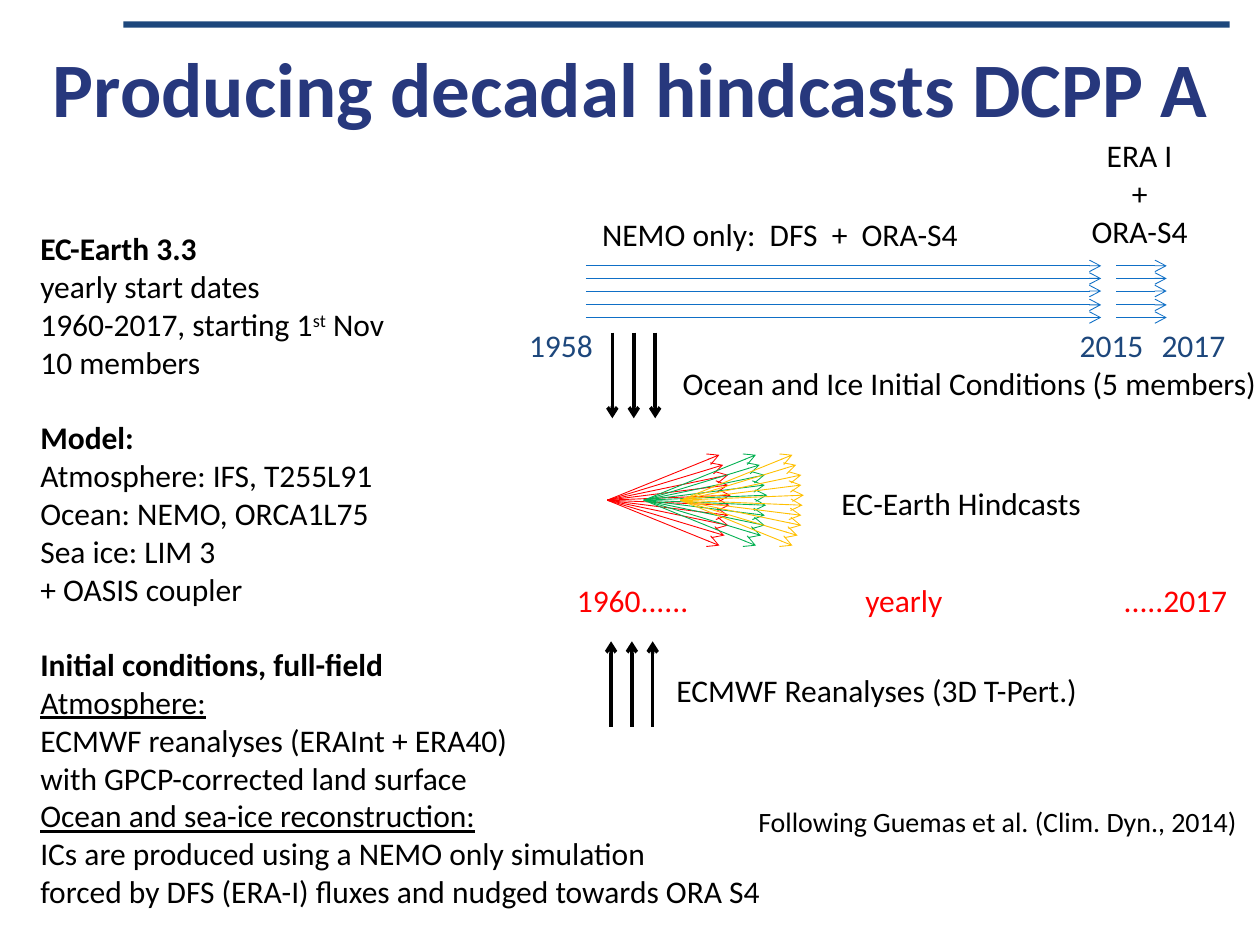
from dataclasses import dataclass

from lxml import etree
from pptx import Presentation
from pptx.dml.color import RGBColor
from pptx.enum.shapes import MSO_CONNECTOR, MSO_SHAPE
from pptx.enum.text import MSO_ANCHOR, MSO_AUTO_SIZE, PP_ALIGN
from pptx.oxml.ns import qn
from pptx.util import Inches, Pt

STRAIGHT = MSO_CONNECTOR.STRAIGHT
RECTANGLE = MSO_SHAPE.RECTANGLE
MIDDLE = MSO_ANCHOR.MIDDLE
FIT_SHAPE = MSO_AUTO_SIZE.SHAPE_TO_FIT_TEXT
NO_FIT = MSO_AUTO_SIZE.NONE
LEFT = PP_ALIGN.LEFT
CENTER = PP_ALIGN.CENTER


@dataclass(frozen=True)
class Theme:
    font: str = "Calibri"
    text: str = "000000"
    title: str = "27387D"
    navy: str = "1D477C"
    blue: str = "0F6FC6"
    red: str = "FF0000"
    green: str = "00B050"
    yellow: str = "FFC000"
    title_size: float = 44
    text_size: float = 18
    citation_size: float = 16
    section_gap: float = 21.6
    thin: float = 0.5
    thick: float = 2


THEME = Theme()


def write(paragraph, text, size=THEME.text_size, color=THEME.text, bold=False,
          underline=False, superscript=False):
    run = paragraph.add_run()
    run.text = text
    font = run.font
    font.name = THEME.font
    font.size = Pt(size)
    font.color.rgb = RGBColor.from_string(color)
    font.bold = bold
    font.underline = underline
    if superscript:
        run._r.get_or_add_rPr().set("baseline", "30000")


def place(shape, left, top, width, height):
    shape.left, shape.top = Inches(left), Inches(top)
    shape.width, shape.height = Inches(width), Inches(height)


class SlideBuilder:
    def __init__(self, slide, theme):
        self.slide = slide
        self.theme = theme

    def bar(self, left, top, width, height):
        shape = self.slide.shapes.add_shape(
            RECTANGLE, Inches(left), Inches(top), Inches(width), Inches(height))
        shape.shadow.inherit = False
        shape.fill.solid()
        shape.fill.fore_color.rgb = RGBColor.from_string(self.theme.navy)
        shape.line.fill.background()

    def title(self, text, *box):
        shape = self.slide.shapes.title
        place(shape, *box)
        frame = shape.text_frame
        frame.auto_size = NO_FIT
        frame.word_wrap = True
        frame.vertical_anchor = MIDDLE
        paragraph = frame.paragraphs[0]
        paragraph.alignment = CENTER
        paragraph.line_spacing = 0.9
        write(paragraph, text, size=self.theme.title_size,
              color=self.theme.title, bold=True)

    def body(self, sections, *box):
        shape = self.slide.placeholders[1]
        place(shape, *box)
        frame = shape.text_frame
        frame.word_wrap = False
        frame.auto_size = FIT_SHAPE
        paragraph = frame.paragraphs[0]
        for section_index, section in enumerate(sections):
            for line_index, runs in enumerate(section):
                if section_index or line_index:
                    paragraph = frame.add_paragraph()
                properties = paragraph._p.get_or_add_pPr()
                properties.set("marL", "0")
                properties.set("indent", "0")
                etree.SubElement(properties, qn("a:buNone"))
                starts_section = section_index and not line_index
                paragraph.space_before = Pt(
                    self.theme.section_gap if starts_section else 0)
                paragraph.alignment = LEFT
                for text, style in runs:
                    write(paragraph, text, **style)

    def label(self, lines, left, top, width, height=0.4, alignment=LEFT, **style):
        shape = self.slide.shapes.add_textbox(
            Inches(left), Inches(top), Inches(width), Inches(height))
        frame = shape.text_frame
        frame.word_wrap = False
        frame.auto_size = FIT_SHAPE
        for index, text in enumerate(lines):
            paragraph = frame.add_paragraph() if index else frame.paragraphs[0]
            paragraph.alignment = alignment
            write(paragraph, text, **style)

    def arrow(self, start, end, color, width, shapes=None):
        target = self.slide.shapes if shapes is None else shapes
        connector = target.add_connector(
            STRAIGHT, *(Inches(value) for value in (*start, *end)))
        connector.line.color.rgb = RGBColor.from_string(color)
        connector.line.width = Pt(width)
        outline = connector.line._get_or_add_ln()
        etree.SubElement(outline, qn("a:tailEnd"), type="arrow")
        etree.SubElement(connector._element.spPr, qn("a:effectLst"))

    def fan(self, left, color):
        group = self.slide.shapes.add_group_shape()
        reaches = (0.89, 0.92, 0.96, 0.96, 0.98, 0.97, 0.96, 0.96, 0.93, 0.89)
        for member, reach in enumerate(reaches):
            self.arrow((left, 3.97), (left + reach, 3.61 + 0.08 * member),
                       color, self.theme.thin, group.shapes)


def main():
    presentation = Presentation()
    presentation.slide_width = Inches(10)
    presentation.slide_height = Inches(7.5)
    slide = presentation.slides.add_slide(presentation.slide_layouts[1])
    builder = SlideBuilder(slide, THEME)

    plain, bold = {}, {"bold": True}
    underlined, raised = {"underline": True}, {"superscript": True}
    sections = [
        [
            [("EC-Earth 3.3", bold)],
            [("yearly start dates", plain)],
            [("1960-2017, starting 1", plain), ("st", raised), (" Nov", plain)],
            [("10 members", plain)],
        ],
        [
            [("Model:", bold)],
            [("Atmosphere: IFS, T255L91", plain)],
            [("Ocean: NEMO, ORCA1L75", plain)],
            [("Sea ice: LIM 3", plain)],
            [("+ OASIS coupler", plain)],
        ],
        [
            [("Initial conditions, full-field", bold)],
            [("Atmosphere:", underlined)],
            [("ECMWF reanalyses (ERAInt + ERA40)", plain)],
            [("with GPCP-corrected land surface", plain)],
            [("Ocean and sea-ice reconstruction:", underlined)],
            [("ICs are produced using a NEMO only simulation", plain)],
            [("forced by DFS (ERA-I) fluxes and nudged towards ORA S4", plain)],
        ],
    ]

    builder.bar(0.98, 0.17, 8.78, 0.05)
    builder.title("Producing decadal hindcasts DCPP A", 0.13, 0.27, 9.76, 0.93)
    builder.body(sections, 0.22, 1.77, 5.93, 5.55)

    for left, right in ((4.65, 8.74), (8.86, 9.26)):
        for top in (2.11, 2.21, 2.31, 2.42, 2.52):
            builder.arrow((left, top), (right, top), THEME.blue, THEME.thin)
    for column in range(3):
        down, up = 4.86 + 0.17 * column, 4.85 + 0.165 * column
        builder.arrow((down, 2.64), (down, 3.32), THEME.text, THEME.thick)
        builder.arrow((up, 5.77), (up, 5.09), THEME.text, THEME.thick)
    for index, color in enumerate((THEME.red, THEME.green, THEME.yellow)):
        builder.fan(4.82 + 0.29 * index, color)

    for year, left in (("1958", 4.1), ("2015", 8.47), ("2017", 9.12)):
        builder.label([year], left, 2.54, 0.71, color=THEME.navy)
    for text, left, width in (("1960......", 4.48, 1.3), ("yearly", 6.77, 0.9),
                              (".....2017", 8.82, 1.03)):
        builder.label([text], left, 4.56, width, color=THEME.red)
    for text, left, top, width in (
        ("NEMO only:  DFS  +  ORA-S4", 4.68, 1.66, 3.23),
        ("Ocean and Ice Initial Conditions (5 members)", 5.32, 2.84, 4.81),
        ("EC-Earth Hindcasts", 6.58, 3.79, 2.12),
        ("ECMWF Reanalyses (3D T-Pert.)", 5.27, 5.28, 3.56),
    ):
        builder.label([text], left, top, width)
    builder.label(["ERA I", "+", "ORA-S4"], 8.56, 1.03, 0.97, 1.01, CENTER)
    builder.label(["Following Guemas et al. (Clim. Dyn., 2014)"],
                  5.92, 6.34, 4.04, 0.37, size=THEME.citation_size)

    presentation.save("out.pptx")


if __name__ == "__main__":
    main()
